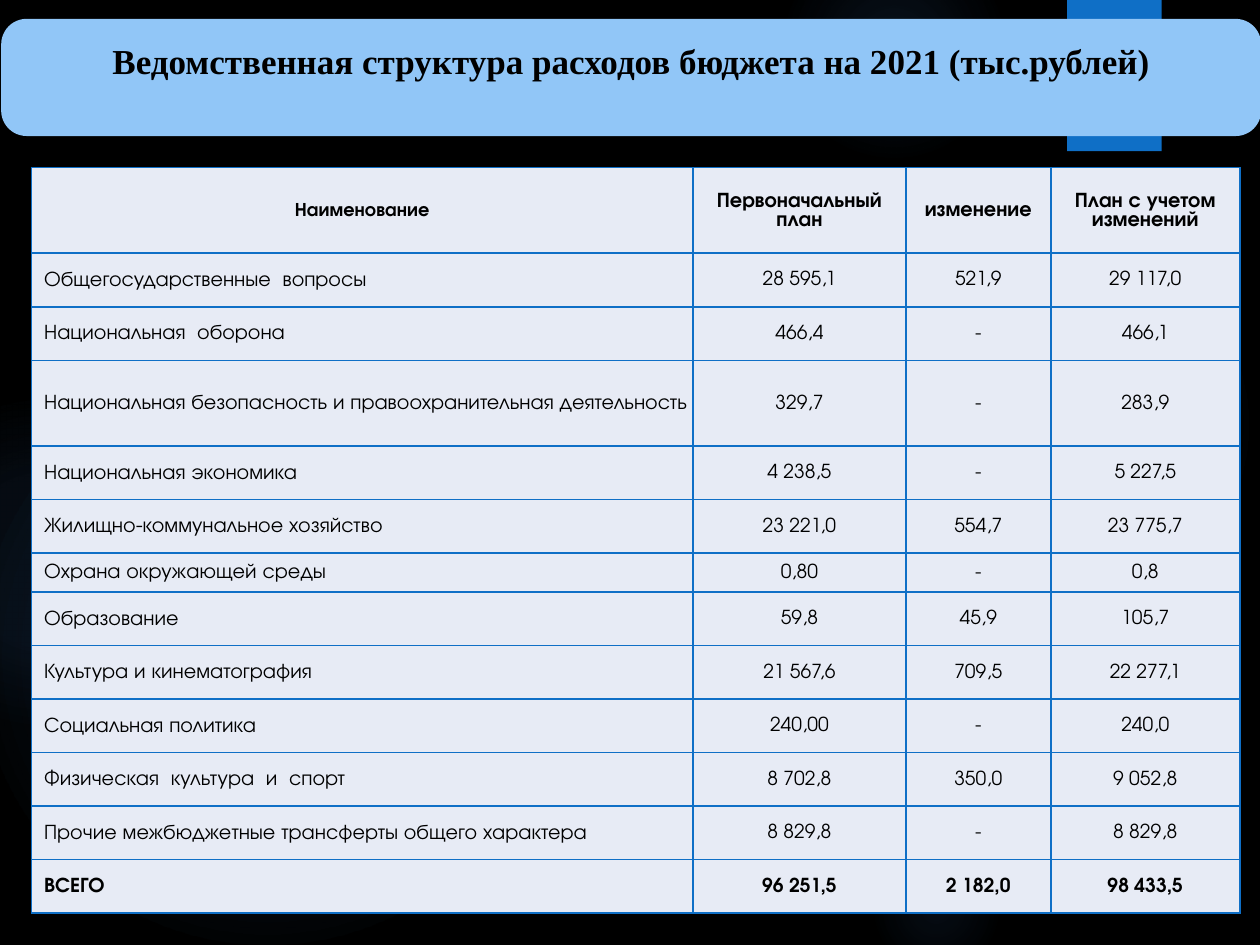
from lxml.etree import SubElement
from pptx import Presentation
from pptx.dml.color import RGBColor
from pptx.enum.shapes import MSO_SHAPE
from pptx.enum.text import MSO_ANCHOR, PP_ALIGN
from pptx.oxml import parse_xml
from pptx.oxml.ns import nsdecls, qn
from pptx.util import Inches, Pt

TITLE = "Ведомственная структура расходов бюджета на 2021 (тыс.рублей)"
HEADERS = ["Наименование", "Первоначальный план", "изменение", "План с учетом изменений"]
EXPENSES = [
    ("Общегосударственные  вопросы", "28 595,1", "521,9", "29 117,0"),
    ("Национальная  оборона", "466,4", "-", "466,1"),
    ("Национальная безопасность и правоохранительная деятельность", "329,7", "-", "283,9"),
    ("Национальная экономика", "4 238,5", "-", "5 227,5"),
    ("Жилищно-коммунальное хозяйство", "23 221,0", "554,7", "23 775,7"),
    ("Охрана окружающей среды", "0,80", "-", "0,8"),
    ("Образование", "59,8", "45,9", "105,7"),
    ("Культура и кинематография", "21 567,6", "709,5", "22 277,1"),
    ("Социальная политика", "240,00", "-", "240,0"),
    ("Физическая  культура  и  спорт", "8 702,8", "350,0", "9 052,8"),
    ("Прочие межбюджетные трансферты общего характера", "8 829,8", "-", "8 829,8"),
    ("ВСЕГО", "96 251,5", "2 182,0", "98 433,5"),
]
GLOWS = [
    (6.89, 1.83, 3.08, [(0, 7), (36, 6), (69, 0)]),
    (6.22, -0.5, 1.75, [(0, 14), (36, 7), (73, 0)]),
    (6.89, 6.67, 1.08, [(0, 9), (36, 5), (66, 0)]),
    (-0.17, 2.92, 4.58, [(0, 11), (36, 10), (75, 0)]),
    (-0.92, 3.17, 2.58, [(0, 8), (36, 8), (72, 0)]),
]
COLUMN_WIDTHS = [5.25, 1.69, 1.15, 1.5]
SPECIAL_HEIGHTS = {0: 0.68, 3: 0.68, 6: 0.31}
TABLE_HEIGHT = 5.92
BODY_FONT, TITLE_FONT = "TeX Gyre Adventor", "Times New Roman"
BLACK, BLUE, LIGHT_BLUE, GLOW, CELL = "000000", "0F6FC6", "91C6F7", "448AD7", "E7EBF5"


def paint(fill, color):
    fill.solid()
    fill.fore_color.rgb = RGBColor.from_string(color)


def add_box(page, kind, left, top, width, height, color):
    box = page.shapes.add_shape(kind, Inches(left), Inches(top), Inches(width), Inches(height))
    box.shadow.inherit = False
    box.line.fill.background()
    paint(box.fill, color)
    return box


def write(frame, text, font, size, bold, align):
    frame.word_wrap = True
    para = frame.paragraphs[0]
    para.alignment = align
    span = para.add_run()
    span.text = text
    span.font.name, span.font.size, span.font.bold = font, Pt(size), bold
    span.font.color.rgb = RGBColor.from_string(BLACK)
    return para


def add_glow(page, left, top, size, stops):
    box = add_box(page, MSO_SHAPE.OVAL, left, top, size, size, GLOW)
    stop_xml = "".join(
        f'<a:gs pos="{place * 1000}"><a:srgbClr val="{GLOW}">'
        f'<a:alpha val="{opacity * 1000}"/></a:srgbClr></a:gs>'
        for place, opacity in stops
    )
    gradient = parse_xml(
        f'<a:gradFill {nsdecls("a")}><a:gsLst>{stop_xml}</a:gsLst><a:path path="circle">'
        '<a:fillToRect l="50000" t="50000" r="50000" b="50000"/></a:path></a:gradFill>'
    )
    properties = box._element.spPr
    properties.replace(properties.find(qn("a:solidFill")), gradient)


def add_borders(cell):
    properties = cell._tc.get_or_add_tcPr()
    for side in ("a:lnL", "a:lnR", "a:lnT", "a:lnB"):
        line = SubElement(properties, qn(side), w=str(Pt(1)))
        SubElement(SubElement(line, qn("a:solidFill")), qn("a:srgbClr"), val=BLUE)


def fill_cell(cell, text, row, column):
    header, label = row == 0, column == 0
    add_borders(cell)
    paint(cell.fill, CELL)
    cell.vertical_anchor = MSO_ANCHOR.MIDDLE
    cell.margin_left = Inches(0.1 if label and not header else 0.01)
    cell.margin_right = cell.margin_top = Inches(0.01)
    cell.margin_bottom = 0
    size = 12 if header != label else 11
    align = PP_ALIGN.LEFT if label and not header else PP_ALIGN.CENTER
    write(cell.text_frame, text, BODY_FONT, size, row in (0, len(EXPENSES)), align)


def add_budget_table(page):
    rows = [HEADERS, *EXPENSES]
    table = page.shapes.add_table(
        len(rows), len(HEADERS), Inches(0.25), Inches(1.33),
        Inches(sum(COLUMN_WIDTHS)), Inches(TABLE_HEIGHT),
    ).table
    table.first_row = table.horz_banding = False
    for column, width in zip(table.columns, COLUMN_WIDTHS):
        column.width = Inches(width)
    regular = (TABLE_HEIGHT - sum(SPECIAL_HEIGHTS.values())) / (len(rows) - len(SPECIAL_HEIGHTS))
    for row, texts in enumerate(rows):
        table.rows[row].height = Inches(SPECIAL_HEIGHTS.get(row, regular))
        for column, text in enumerate(texts):
            fill_cell(table.cell(row, column), text, row, column)


def add_title(page):
    box = add_box(page, MSO_SHAPE.ROUNDED_RECTANGLE, 0.01, 0.15, 10, 0.93, LIGHT_BLUE)
    box.adjustments[0] = 0.217
    frame = box.text_frame
    frame.vertical_anchor = MSO_ANCHOR.MIDDLE
    frame.margin_bottom = Inches(0.28)
    para = write(frame, TITLE, TITLE_FONT, 20, True, PP_ALIGN.CENTER)
    para.line_spacing = 0.9


def main():
    """Build the budget expenditure slide."""
    deck = Presentation()
    deck.slide_width, deck.slide_height = Inches(10), Inches(7.5)
    page = deck.slides.add_slide(deck.slide_layouts[6])
    paint(page.background.fill, BLACK)
    for glow in GLOWS:
        add_glow(page, *glow)
    add_box(page, MSO_SHAPE.RECTANGLE, 8.47, 0, 0.75, 1.2, BLUE)
    add_budget_table(page)
    add_title(page)
    deck.save("out.pptx")


if __name__ == "__main__":
    main()
